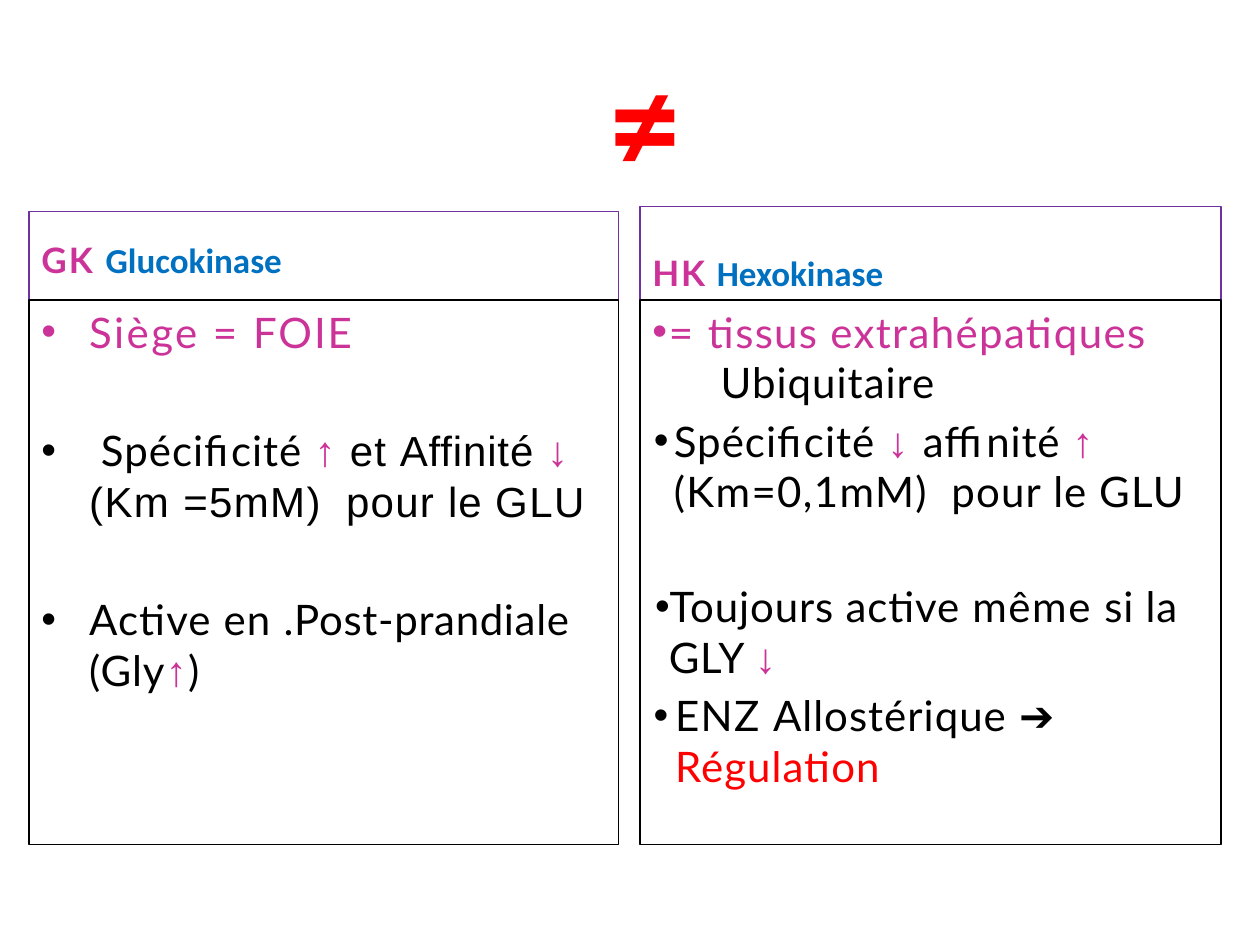
from dataclasses import dataclass
from typing import NamedTuple, Optional

from lxml import etree
from pptx import Presentation
from pptx import util as u
from pptx.dml.color import RGBColor
from pptx.enum import shapes, text
from pptx.oxml.ns import qn

RED = RGBColor(0xFF, 0x00, 0x00)
PINK = RGBColor(0xCC, 0x33, 0x99)
BLUE = RGBColor(0x00, 0x70, 0xC0)
PURPLE = RGBColor(0x70, 0x30, 0xA0)
BLACK = RGBColor(0x00, 0x00, 0x00)

# The slide is a grid of 100 columns by 75 rows
WIDTH, HEIGHT = u.Inches(10), u.Inches(7.5)
COLUMN, ROW = WIDTH / 100, HEIGHT / 75

ITEM_GAP = 4.8   # points between neighbouring items
BLOCK_GAP = 39   # points between separated items


class Span(NamedTuple):
    words: str
    color: RGBColor = BLACK
    spacing: float = 0.6
    font: str = "Lato"
    size: float = 24
    bold: bool = False


class Item(NamedTuple):
    spans: list[Span]
    margin: float = 0     # inches
    hanging: float = 0    # inches; a hanging item has a bullet
    before: float = 0     # points


@dataclass
class Panel:
    left: float
    top: float
    width: float
    height: float
    items: list[Item]
    outline: Optional[RGBColor] = BLACK
    anchor: text.MSO_ANCHOR = text.MSO_ANCHOR.TOP
    align: text.PP_ALIGN = text.PP_ALIGN.LEFT
    bottom_inset: float = 0.05


def arrow(words: str) -> Span:
    return Span(words, PINK, 0.8, "Arial", bold=True)


def arial(words: str, spacing: float = 0.8) -> Span:
    return Span(words, spacing=spacing, font="Arial")


def heading(short: str, enzyme: str, spacing: float) -> list[Item]:
    return [Item([Span(short, PINK, spacing, size=20, bold=True),
                  Span(enzyme, BLUE, 0, "Calibri", 20, True)])]


def add_text(paragraph, words: str, *, color: RGBColor, spacing: float,
             font: str, size: float, bold: bool) -> None:
    run = paragraph.add_run()
    run.text = words
    run.font.name, run.font.size, run.font.bold = font, u.Pt(size), bold
    run.font.color.rgb = color
    run._r.get_or_add_rPr().set("spc", str(round(spacing * 100)))


def add_item(paragraph, item: Item, align: text.PP_ALIGN) -> None:
    paragraph.alignment = align
    paragraph.space_before = u.Pt(item.before)
    props = paragraph._p.get_or_add_pPr()
    props.set("marL", str(u.Inches(item.margin)))
    props.set("indent", str(-u.Inches(item.hanging)))
    if item.hanging:
        etree.SubElement(props, qn("a:buFont")).set("typeface", "Arial")
        etree.SubElement(props, qn("a:buChar")).set("char", "•")
    else:
        etree.SubElement(props, qn("a:buNone"))
    for span in item.spans:
        details = span._asdict()
        add_text(paragraph, details.pop("words"), **details)


def draw_panel(slide, panel: Panel) -> None:
    box = slide.shapes.add_shape(
        shapes.MSO_SHAPE.RECTANGLE,
        round(panel.left * COLUMN), round(panel.top * ROW),
        round(panel.width * COLUMN), round(panel.height * ROW))
    box.shadow.inherit = False
    box.fill.background()
    if panel.outline is None:
        box.line.fill.background()
    else:
        box.line.color.rgb = panel.outline
        box.line.width = u.Pt(0.75)
    frame = box.text_frame
    frame.word_wrap = True
    frame.vertical_anchor = panel.anchor
    frame.margin_bottom = u.Inches(panel.bottom_inset)
    for index, item in enumerate(panel.items):
        paragraph = frame.add_paragraph() if index else frame.paragraphs[0]
        add_item(paragraph, item, panel.align)


# A single wide space sets the affinity constant apart
WIDE_SPACE = arial(" ", 7)

GLUCOKINASE = [
    Item([Span("Siège = ", PINK, 1.4), Span("FOIE", PINK, 1.1)], 0.38, 0.38),
    Item([Span(" Spécificité "), arrow("↑ "), arial("et ", 0.6),
          arial("Affinité ", 0.5), arrow("↓ "), arial("(Km =5mM)"), WIDE_SPACE,
          arial("pour ", 0.7), arial("le ", 0.5), arial("GLU", 0.9)],
         0.38, 0.38, BLOCK_GAP),
    Item([Span("Active "), Span("en ", spacing=0.7),
          Span(".Post-prandiale ", spacing=0.4), Span("(Gly"),
          arrow("↑"), Span(")")], 0.38, 0.38, BLOCK_GAP),
]

HEXOKINASE = [
    Item([Span("= ", PINK, 1.1), Span("tissus ", PINK, 0.7),
          Span("extrahépatiques", PINK, 0.8)], 0.13, 0.13),
    Item([Span("Ubiquitaire")], 0.54),
    Item([Span("Spécificité "), arrow("↓ "), Span("affinité ", spacing=0.5),
          arrow("↑ "), Span("(Km=0,1mM)", spacing=0.8),
          WIDE_SPACE._replace(font="Lato"), Span("pour ", spacing=0.7),
          Span("le ", spacing=0.5), Span("GLU", spacing=0.8)],
         0.17, 0.16, ITEM_GAP),
    Item([Span("Toujours active ", spacing=0.5), Span("même ", spacing=0.9),
          Span("si ", spacing=0.4), Span("la ", spacing=0.5),
          Span("GLY ", spacing=0.4), arrow("↓")], 0.13, 0.11, BLOCK_GAP - 2),
    Item([Span("ENZ ", spacing=0.8), Span("Allostérique "), arial("➔ ", 1.4),
          Span("Régulation", RED)], 0.18, 0.17, ITEM_GAP),
]

# Left and right columns share the body rows
LEFT, LEFT_WIDTH = 2.3, 46.8
RIGHT, RIGHT_WIDTH = 50.8, 46.1
BODY_TOP, BODY_HEIGHT = 23.8, 43.2
MIDDLE, BOTTOM = text.MSO_ANCHOR.MIDDLE, text.MSO_ANCHOR.BOTTOM

PANELS = [
    # Title sign
    Panel(5, 3, 90, 12.5, [Item([Span(" ≠", RED, 0, "Calibri", 80, True)])],
          None, MIDDLE, text.PP_ALIGN.CENTER),
    # Glucokinase
    Panel(LEFT, BODY_TOP - 7, LEFT_WIDTH, 7,
          heading("GK ", "Glucokinase", 1.2), PURPLE, BOTTOM, bottom_inset=0.15),
    Panel(LEFT, BODY_TOP, LEFT_WIDTH, BODY_HEIGHT, GLUCOKINASE),
    # Hexokinase
    Panel(RIGHT, BODY_TOP - 7.4, RIGHT_WIDTH, 7.4,
          heading("HK ", "Hexokinase", 0.9), PURPLE, BOTTOM),
    Panel(RIGHT, BODY_TOP, RIGHT_WIDTH, BODY_HEIGHT, HEXOKINASE),
]


def main() -> None:
    deck = Presentation()
    deck.slide_width, deck.slide_height = WIDTH, HEIGHT
    slide = deck.slides.add_slide(deck.slide_layouts[6])
    for panel in PANELS:
        draw_panel(slide, panel)
    deck.save("out.pptx")


if __name__ == "__main__":
    main()
